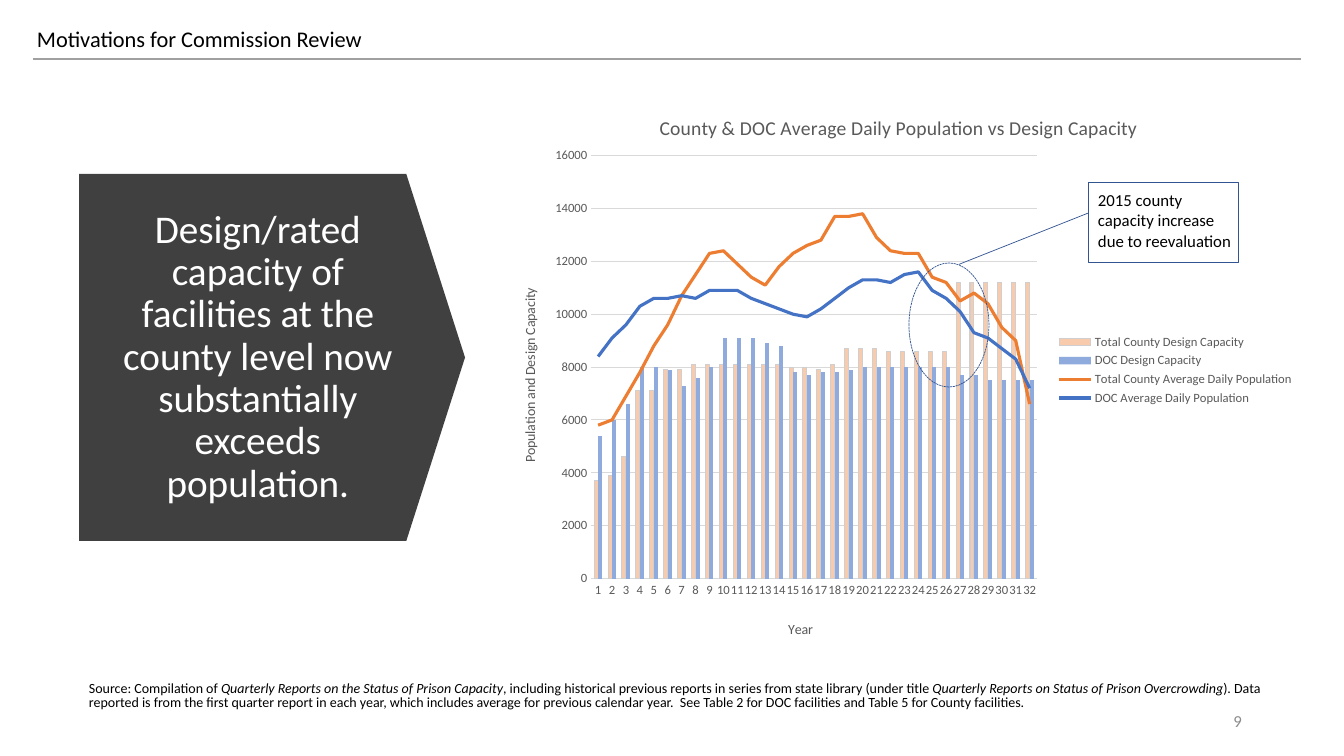
from dataclasses import dataclass

from lxml import etree
from pptx import Presentation
from pptx import util as u
from pptx.chart import data as chart_data
from pptx.dml import color
from pptx.enum import chart as charts
from pptx.enum import dml, shapes, text
from pptx.oxml import ns

PX = 914400 / 100.8

POPULATION_IN_HUNDREDS = {
    "Total County Design Capacity": [
        37, 39, 46, 71, 71, 79, 79, 81, 81, 81, 81, 81, 81, 81, 80, 80,
        79, 81, 87, 87, 87, 86, 86, 86, 86, 86, 112, 112, 112, 112, 112, 112],
    "DOC Design Capacity": [
        54, 60, 66, 80, 80, 79, 73, 76, 80, 91, 91, 91, 89, 88, 78, 77,
        78, 78, 79, 80, 80, 80, 80, 80, 80, 80, 77, 77, 75, 75, 75, 75],
    "Total County Average Daily Population": [
        58, 60, 69, 78, 88, 96, 107, 115, 123, 124, 119, 114, 111, 118, 123, 126,
        128, 137, 137, 138, 129, 124, 123, 123, 114, 112, 105, 108, 104, 95, 90, 66],
    "DOC Average Daily Population": [
        84, 91, 96, 103, 106, 106, 107, 106, 109, 109, 109, 106, 104, 102, 100, 99,
        102, 106, 110, 113, 113, 112, 115, 116, 109, 106, 101, 93, 91, 87, 83, 72],
}

SOURCE_NOTE = [
    ("Source: Compilation of ", False),
    ("Quarterly Reports on the Status of Prison Capacity", True),
    (", including historical previous reports in series from state library (under title ", False),
    ("Quarterly Reports on Status of Prison Overcrowding", True),
    ("). Data reported is from the first quarter report in each year, which includes average "
     "for previous calendar year.  See Table 2 for DOC facilities and Table 5 for County "
     "facilities.", False),
]


@dataclass(frozen=True)
class Theme:
    font: str = "Calibri"
    ink: str = "000000"
    paper: str = "FFFFFF"
    arrow: str = "404040"
    rule: str = "A0A0A0"
    page: str = "8C8C8C"
    callout: str = "325491"
    chart_text: str = "595959"
    grid: str = "D9D9D9"
    bar_edge: str = "D0CECE"
    bars: tuple = ("F8CBAD", "8FAADC")
    lines: tuple = ("ED7D31", "4472C4")
    message_size: int = 28
    title_size: int = 16
    chart_title_size: int = 14
    label_size: int = 12
    note_size: int = 10
    tick_size: int = 9


def rgb(value):
    return color.RGBColor.from_string(value)


def px(*values):
    return [u.Emu(round(value * PX)) for value in values]


class SlideBuilder:
    def __init__(self, presentation, theme):
        self.theme = theme
        self.slide = presentation.slides.add_slide(presentation.slide_layouts[5])

    def style_font(self, font, size, ink):
        font.name, font.size = self.theme.font, u.Pt(size)
        font.color.rgb = rgb(ink)

    def style_line(self, line, ink, width):
        line.color.rgb = rgb(ink)
        line.width = u.Pt(width)

    def set_text(self, shape, runs, size, ink, align=text.PP_ALIGN.LEFT,
                 anchor=text.MSO_ANCHOR.TOP, margins=(10, 5, 10, 5), spacing=1.0):
        frame = shape.text_frame
        frame.word_wrap = True
        frame.auto_size = text.MSO_AUTO_SIZE.NONE
        frame.vertical_anchor = anchor
        (frame.margin_left, frame.margin_top,
         frame.margin_right, frame.margin_bottom) = px(*margins)
        paragraph = frame.paragraphs[0]
        paragraph.alignment, paragraph.line_spacing = align, spacing
        self.style_font(paragraph.font, size, ink)
        for words, italic in runs:
            run = paragraph.add_run()
            run.text = words
            if italic:
                run.font.italic = True

    def title(self, box, words):
        shape = self.slide.shapes.title
        shape.left, shape.top, shape.width, shape.height = px(*box)
        self.set_text(shape, [(words, False)], self.theme.title_size, self.theme.ink)

    def textbox(self, box, runs, size, ink, **options):
        shape = self.slide.shapes.add_textbox(*px(*box))
        self.set_text(shape, runs, size, ink, **options)

    def shape(self, kind, box, fill=None, line=None, dash=None, adjustments=()):
        shape = self.slide.shapes.add_shape(kind, *px(*box))
        shape.shadow.inherit = False
        for index, value in enumerate(adjustments):
            shape.adjustments[index] = value
        if fill:
            shape.fill.solid()
            shape.fill.fore_color.rgb = rgb(fill)
        else:
            shape.fill.background()
        if line:
            self.style_line(shape.line, line, 0.5)
            shape.line.dash_style = dash
        else:
            shape.line.fill.background()
        return shape

    def rule(self, start, end):
        connector = self.slide.shapes.add_connector(
            shapes.MSO_CONNECTOR.STRAIGHT, *px(*start, *end))
        self.style_line(connector.line, self.theme.rule, 1)
        etree.SubElement(connector._element.spPr, ns.qn("a:effectLst"))

    def place(self, element, **fractions):
        layout = element.find(ns.qn("c:layout"))
        if layout is None:
            layout = etree.Element(ns.qn("c:layout"))
            element.insert(0 if element.find(ns.qn("c:tx")) is None else 1, layout)
        manual = etree.SubElement(layout, ns.qn("c:manualLayout"))
        settings = {"xMode": "edge", "yMode": "edge", **fractions}
        if "w" in fractions:
            settings = {"layoutTarget": "inner", **settings}
        for name, value in settings.items():
            etree.SubElement(manual, ns.qn(f"c:{name}")).set("val", str(value))

    def chart_title(self, title, words, size, x, y):
        paragraph = title.text_frame.paragraphs[0]
        paragraph.text = words
        self.style_font(paragraph.font, size, self.theme.chart_text)
        paragraph.font.bold = False
        self.place(title._element, x=x, y=y)

    def split_lines(self, bar_chart, line_series):
        line_chart = bar_chart.makeelement(ns.qn("c:lineChart"))
        bar_chart.addnext(line_chart)
        etree.SubElement(line_chart, ns.qn("c:grouping")).set("val", "standard")
        etree.SubElement(line_chart, ns.qn("c:varyColors")).set("val", "0")
        for series in line_series:
            invert = series.find(ns.qn("c:invertIfNegative"))
            if invert is not None:
                series.remove(invert)
            line_chart.append(series)
        etree.SubElement(line_chart, ns.qn("c:marker")).set("val", "1")
        for axis in bar_chart.findall(ns.qn("c:axId")):
            etree.SubElement(line_chart, ns.qn("c:axId")).set("val", axis.get("val"))

    def combined_chart(self, box, title, category_title, value_title, table):
        theme = self.theme
        data = chart_data.CategoryChartData()
        data.categories = [str(year) for year in range(1, 33)]
        for name, hundreds in table.items():
            data.add_series(name, [value * 100 for value in hundreds])
        chart = self.slide.shapes.add_chart(
            charts.XL_CHART_TYPE.COLUMN_CLUSTERED, *px(*box), data).chart
        self.style_font(chart.font, theme.tick_size, theme.chart_text)
        bar_chart = chart.plots[0]._element
        self.split_lines(bar_chart, bar_chart.findall(ns.qn("c:ser"))[len(theme.bars):])
        bars, lines = chart.plots
        bars.gap_width, bars.vary_by_categories = 150, False
        for series, fill in zip(bars.series, theme.bars):
            series.format.fill.solid()
            series.format.fill.fore_color.rgb = rgb(fill)
        self.style_line(bars.series[0].format.line, theme.bar_edge, 0.75)
        for series, ink in zip(lines.series, theme.lines):
            self.style_line(series.format.line, ink, 2.25)
            series.marker.style = charts.XL_MARKER_STYLE.NONE
            series.smooth = False

        years, values = chart.category_axis, chart.value_axis
        for axis in (years, values):
            axis.major_tick_mark = axis.minor_tick_mark = charts.XL_TICK_MARK.NONE
            self.style_font(axis.tick_labels.font, theme.tick_size, theme.chart_text)
        self.style_line(years.format.line, theme.grid, 0.75)
        values.format.line.fill.background()
        self.style_line(values.major_gridlines.format.line, theme.grid, 0.75)
        values.minimum_scale, values.maximum_scale, values.major_unit = 0, 16000, 2000

        self.chart_title(chart.chart_title, title, theme.chart_title_size, 0.2, 0.04)
        self.chart_title(years.axis_title, category_title, theme.note_size, 0.36, 0.94)
        self.chart_title(values.axis_title, value_title, theme.note_size, 0.03, 0.35)
        body = next(values.axis_title._element.iter(ns.qn("a:bodyPr")))
        body.set("rot", "-5400000")
        body.set("vert", "horz")
        self.place(bar_chart.getparent(), x=0.12, y=0.12, w=0.55, h=0.75)

        chart.has_legend = True
        chart.legend.position = charts.XL_LEGEND_POSITION.RIGHT
        chart.legend.include_in_layout = False
        self.style_font(chart.legend.font, theme.tick_size, theme.chart_text)


def main():
    presentation = Presentation()
    presentation.slide_width, presentation.slide_height = px(1344, 756)
    theme = Theme()
    builder = SlideBuilder(presentation, theme)
    kinds = shapes.MSO_SHAPE

    builder.title((27, 20, 444, 37), "Motivations for Commission Review")
    builder.rule((33, 59), (1301, 59))
    message = builder.shape(kinds.PENTAGON, (79, 174, 386, 367), theme.arrow, adjustments=(0.16,))
    builder.set_text(
        message, [("Design/rated capacity of facilities at the county level now "
                   "substantially exceeds population.", False)],
        theme.message_size, theme.paper, align=text.PP_ALIGN.CENTER,
        anchor=text.MSO_ANCHOR.MIDDLE, margins=(44, 5, 43, 5), spacing=0.9)
    builder.combined_chart(
        (494, 88, 810, 564), "County & DOC Average Daily Population vs Design Capacity",
        "Year", "Population and Design Capacity", POPULATION_IN_HUNDREDS)
    builder.shape(kinds.OVAL, (909, 263, 80, 124), line=theme.callout,
                  dash=dml.MSO_LINE.SQUARE_DOT)
    callout = builder.shape(kinds.LINE_CALLOUT_1, (1088, 182, 150, 80), line=theme.callout,
                            adjustments=(0.39, 0, 1.03, -0.86))
    builder.set_text(callout, [("2015 county capacity increase due to reevaluation", False)],
                     theme.label_size, theme.ink, margins=(10, 8, 3, 0))
    builder.textbox((79, 678, 1195, 37), SOURCE_NOTE, theme.note_size, theme.ink, spacing=0.8)
    builder.textbox((950, 701, 302, 40), [("9", False)], theme.label_size, theme.page,
                    align=text.PP_ALIGN.RIGHT, anchor=text.MSO_ANCHOR.MIDDLE)
    presentation.save("out.pptx")


if __name__ == "__main__":
    main()
